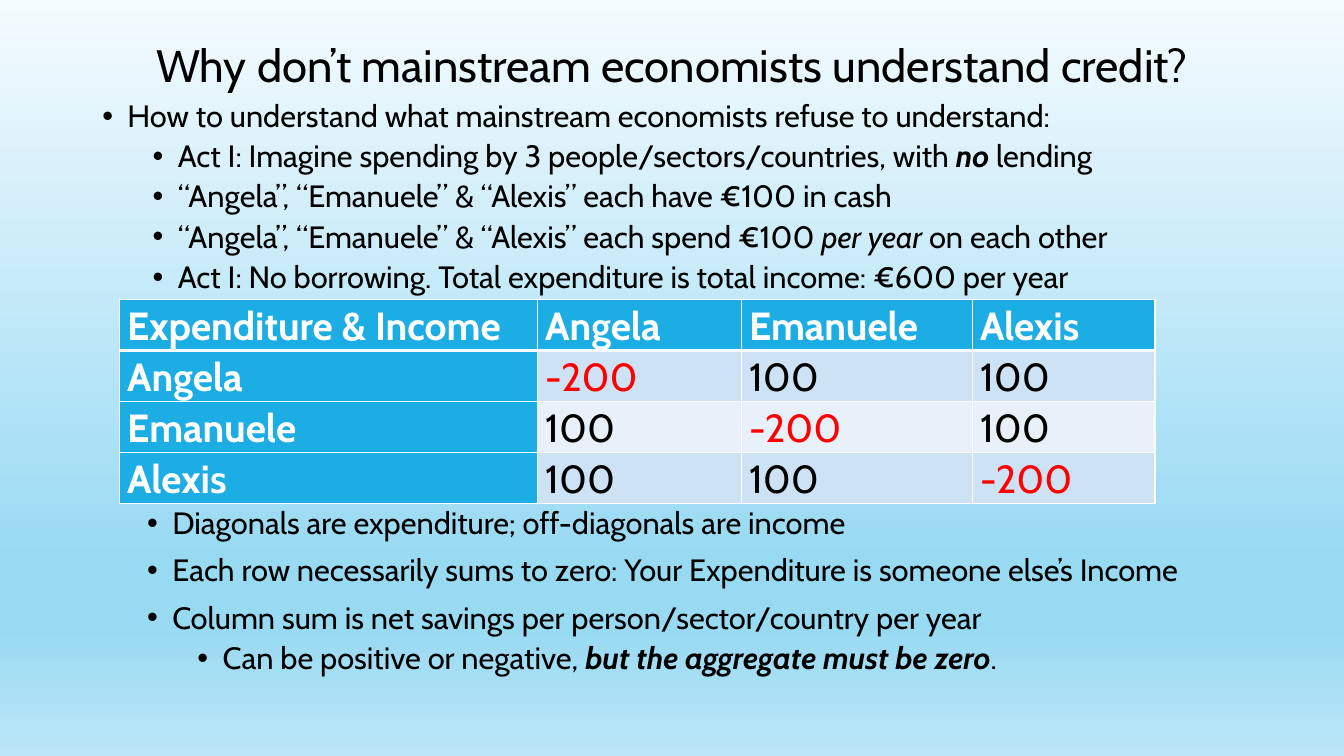
from lxml import etree
from pptx import Presentation
from pptx.dml.color import RGBColor
from pptx.enum.text import MSO_ANCHOR, MSO_AUTO_SIZE
from pptx.oxml import parse_xml
from pptx.oxml.ns import nsdecls, qn
from pptx.util import Pt

MIDDLE = MSO_ANCHOR.MIDDLE
NO_FIT = MSO_AUTO_SIZE.NONE
TITLE_ONLY = 5
FONT = "Cabin"
COLORS = {
    "text": "000000", "white": "FFFFFF", "negative": "FF0000",
    "header": "1CADE4", "band_dark": "CDE3F5", "band_light": "E8F1FA",
}
SKY = [(0, "F4FBFE"), (74, "99DAF3"), (83, "99DAF3"), (100, "BBE6F7")]

# Each bullet: level, then runs of (text, style); style holds "b" and/or "i"
SETUP = [
    (0, [("How to understand what mainstream economists refuse to understand:", "")]),
    (1, [("Act I: Imagine spending by 3 people/sectors/countries, with ", ""),
         ("no", "bi"), (" lending", "")]),
    (1, [("“Angela”, “Emanuele” & “Alexis” each have €100 in cash", "")]),
    (1, [("“Angela”, “Emanuele” & “Alexis” each spend €100 ", ""),
         ("per year", "i"), (" on each other", "")]),
    (1, [("Act I: No borrowing. Total expenditure is total income: €600 per year", "")]),
]
FINDINGS = [
    (0, [("Diagonals are expenditure; off-diagonals are income", "")]),
    (0, [("Each row necessarily sums to zero: Your Expenditure is someone else’s Income", "")]),
    (0, [("Column sum is net savings per person/sector/country per year", "")]),
    (1, [("Can be positive or negative, ", ""),
         ("but the aggregate must be zero", "bi"), (".", "")]),
]
PEOPLE = ["Angela", "Emanuele", "Alexis"]


def format_run(r, size, color="text", style=""):
    r.font.name = FONT
    r.font.size = Pt(size)
    r.font.bold = "b" in style
    r.font.italic = "i" in style
    r.font.color.rgb = RGBColor.from_string(COLORS[color])


def set_background(s):
    stops = "".join(f'<a:gs pos="{pos * 1000}"><a:srgbClr val="{color}"/></a:gs>'
                    for pos, color in SKY)
    bg = parse_xml(
        f'<p:bg {nsdecls("p", "a")}><p:bgPr><a:gradFill rotWithShape="1">'
        f'<a:gsLst>{stops}</a:gsLst><a:lin ang="5400000" scaled="0"/>'
        '</a:gradFill><a:effectLst/></p:bgPr></p:bg>')
    s.element.cSld.insert(0, bg)


def set_title(s, text, left, top, width, height):
    sp = s.shapes.title
    sp.left, sp.top, sp.width, sp.height = Pt(left), Pt(top), Pt(width), Pt(height)
    tf = sp.text_frame
    tf.text = text
    tf.word_wrap = True
    tf.auto_size = NO_FIT
    tf.vertical_anchor = MIDDLE
    p = tf.paragraphs[0]
    p.line_spacing = 0.9
    format_run(p.runs[0], 32.4)


def add_bullets(s, bullets, left, top, width, height):
    tf = s.shapes.add_textbox(Pt(left), Pt(top), Pt(width), Pt(height)).text_frame
    tf.word_wrap = True
    tf.auto_size = NO_FIT
    for n, (level, runs) in enumerate(bullets):
        p = tf.add_paragraph() if n else tf.paragraphs[0]
        p.level = level
        p.line_spacing = 0.9
        p.space_before = Pt(5 if level else 10)
        pPr = p._p.get_or_add_pPr()
        pPr.set("marL", str(Pt(18 + 36 * level)))
        pPr.set("indent", str(Pt(-18)))
        etree.SubElement(pPr, qn("a:buFont")).set("typeface", "Arial")
        etree.SubElement(pPr, qn("a:buChar")).set("char", "•")
        for text, style in runs:
            r = p.add_run()
            r.text = text
            format_run(r, 22, style=style)


def set_borders(cell, row):
    heavy = {0: "lnB", 1: "lnT"}.get(row)
    tcPr = cell._tc.get_or_add_tcPr()
    for side in ("lnL", "lnR", "lnT", "lnB"):
        ln = etree.SubElement(tcPr, qn(f"a:{side}"), w=str(Pt(3 if side == heavy else 1)))
        fill = etree.SubElement(ln, qn("a:solidFill"))
        etree.SubElement(fill, qn("a:srgbClr"), val=COLORS["white"])


def fill_cell(cell, row, col, text):
    cell.margin_left = cell.margin_right = Pt(5.4)
    cell.margin_top = cell.margin_bottom = 0
    if row == 0 or col == 0:
        fill, color, style = "header", "white", "b"
    else:
        fill = "band_dark" if row % 2 else "band_light"
        color, style = ("negative" if row == col else "text"), ""
    set_borders(cell, row)
    cell.fill.solid()
    cell.fill.fore_color.rgb = RGBColor.from_string(COLORS[fill])
    cell.text = text
    p = cell.text_frame.paragraphs[0]
    p.line_spacing = 1.07
    format_run(p.runs[0], 28, color, style)


def add_flow_table(s, left, top, widths, row_height):
    # Everyone spends 200 and receives 100 from each of the others
    rows = [["Expenditure & Income"] + PEOPLE]
    for payer in PEOPLE:
        rows.append([payer] + ["-200" if payer == person else "100" for person in PEOPLE])
    table = s.shapes.add_table(len(rows), len(widths), Pt(left), Pt(top),
                               Pt(sum(widths)), Pt(row_height * len(rows))).table
    for col, width in enumerate(widths):
        table.columns[col].width = Pt(width)
    for row, texts in enumerate(rows):
        table.rows[row].height = Pt(row_height)
        for col, text in enumerate(texts):
            fill_cell(table.cell(row, col), row, col, text)


def main():
    prs = Presentation()
    prs.slide_width, prs.slide_height = Pt(960), Pt(540)
    s = prs.slides.add_slide(prs.slide_layouts[TITLE_ONLY])
    set_background(s)

    # Title and setting of the example
    set_title(s, "Why don’t mainstream economists understand credit?", 66, 28.8, 828, 39.6)
    add_bullets(s, SETUP, 66, 68.4, 828, 145.4)

    # Who pays whom
    add_flow_table(s, 85.5, 214, [298.6, 145.6, 165, 130.4], 36.4)

    # What the table shows
    add_bullets(s, FINDINGS, 98, 359.3, 773.3, 152)

    prs.save("out.pptx")


if __name__ == "__main__":
    main()
